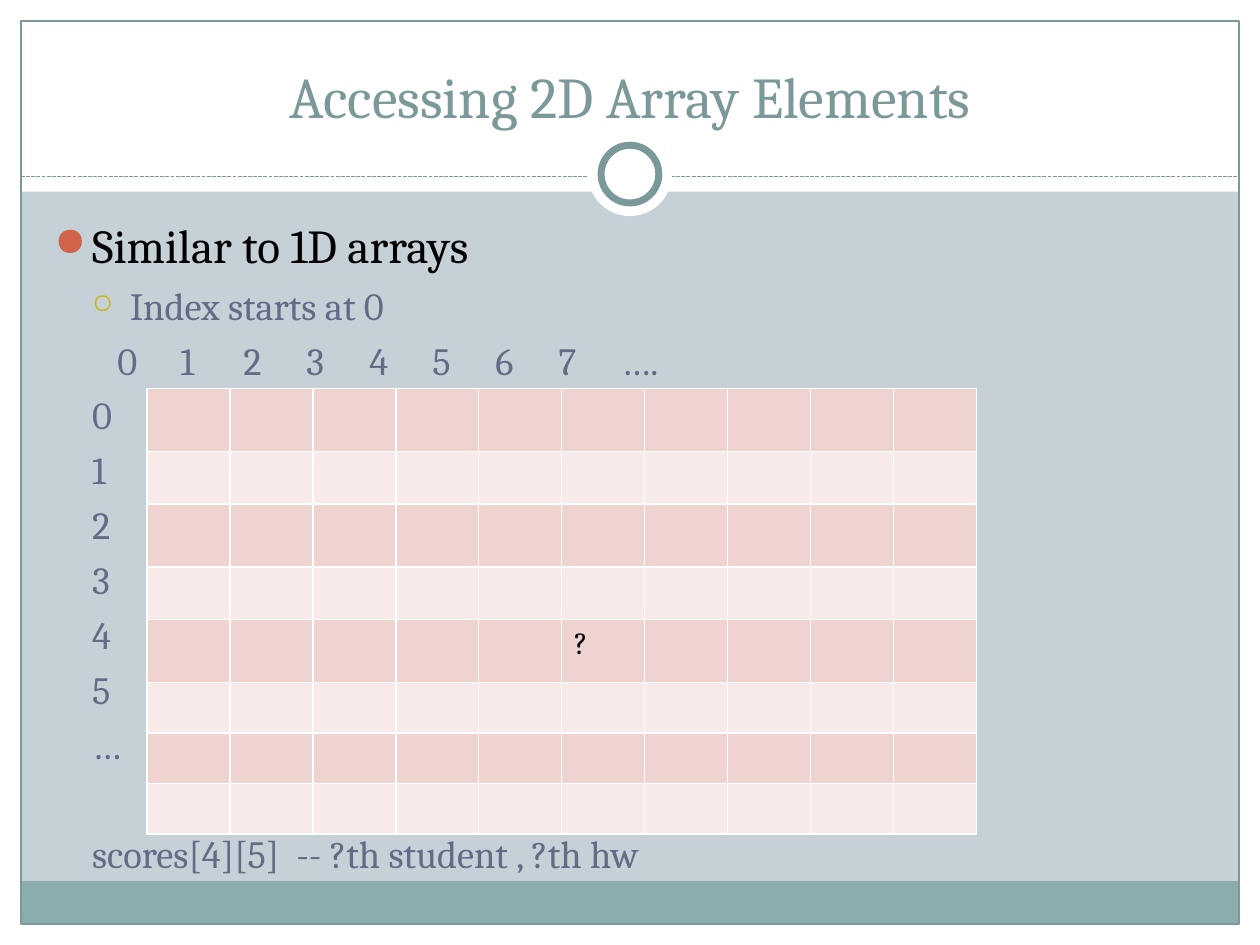
from lxml import etree
from pptx import Presentation
from pptx.dml.color import RGBColor
from pptx.enum.dml import MSO_LINE
from pptx.enum.shapes import MSO_CONNECTOR, MSO_SHAPE
from pptx.enum.text import MSO_ANCHOR, PP_ALIGN
from pptx.oxml import parse_xml
from pptx.oxml.ns import nsdecls, qn
from pptx.util import Pt

WHITE = RGBColor(0xFF, 0xFF, 0xFF)
BLACK = RGBColor(0, 0, 0)
MIST = RGBColor(0xC5, 0xD1, 0xD7)
TEAL = RGBColor(0x7C, 0x99, 0x9A)
BAND = RGBColor(0x8C, 0xAD, 0xAE)
SLATE = RGBColor(0x64, 0x6B, 0x86)
RED = RGBColor(0xD1, 0x63, 0x49)
GOLD = RGBColor(0xCC, 0xB4, 0x00)
ROSE = RGBColor(0xEE, 0xD3, 0xD0)
PALE = RGBColor(0xF7, 0xEA, 0xE9)
FONT = "Cambria"
WIDE, HIGH = 720, 540
STEP = 21.6
STOPS = [70, 109, 157, 196, 240, 284, 329, 368, 413]
ROWS = [36, 30, 36, 30, 36, 28, 28, 28]
COLS = 10


def style(par, size, color):
    par.font.name = FONT
    par.font.size = Pt(size)
    par.font.color.rgb = color


def shape(slide, kind, box, fill=None, line=None, width=0.75):
    item = slide.shapes.add_shape(kind, *map(Pt, box))
    item.shadow.inherit = False
    if fill is None:
        item.fill.background()
    else:
        item.fill.solid()
        item.fill.fore_color.rgb = fill
    if line is None:
        item.line.fill.background()
    else:
        item.line.color.rgb = line
        item.line.width = Pt(width)


def frame(slide, box):
    """Draw the page border, header band, footer band and ring."""
    left, top, width, height = box
    edge, head, foot = 12, 109.5, 24.5
    right, base = left + width, top + height
    inner = width - 2 * edge
    for part in [
        (left, base - edge, width, edge),
        (left, top, width, head),
        (left, top, edge, height),
        (right - edge, top, edge, height),
    ]:
        shape(slide, MSO_SHAPE.RECTANGLE, part, WHITE)
    shape(slide, MSO_SHAPE.RECTANGLE,
          (left + edge, base - edge - foot, inner, foot), BAND)
    shape(slide, MSO_SHAPE.RECTANGLE,
          (left + edge, top + edge, inner, height - 2 * edge), line=TEAL)

    rule = top + 100.8
    line = slide.shapes.add_connector(
        MSO_CONNECTOR.STRAIGHT, Pt(left + edge), Pt(rule), Pt(right - edge), Pt(rule))
    line.line.color.rgb = TEAL
    line.line.width = Pt(0.75)
    line.line.dash_style = MSO_LINE.SQUARE_DOT
    etree.SubElement(line.element.spPr, qn("a:effectLst"))

    mid, hub = left + width / 2, top + 99.5
    for size, color in [(48, None), (33, TEAL)]:
        shape(slide, MSO_SHAPE.OVAL,
              (mid - size / 2, hub - size / 2, size, size), WHITE, color, 4)


def heading(slide, box, text):
    title = slide.shapes.title
    title.left, title.top, title.width, title.height = map(Pt, box)
    title.text_frame.text = text
    title.text_frame.vertical_anchor = MSO_ANCHOR.BOTTOM
    par = title.text_frame.paragraphs[0]
    par.alignment = PP_ALIGN.CENTER
    style(par, 33, TEAL)
    title.element.getparent().append(title.element)


def indent(par, left, hang=0):
    props = par._p.get_or_add_pPr()
    props.set("marL", str(Pt(left)))
    props.set("indent", str(Pt(-hang)))
    return props


def bullet(props, char, color, size):
    for xml in [
        f'<a:buClr {nsdecls("a")}><a:srgbClr val="{color}"/></a:buClr>',
        f'<a:buSzPct {nsdecls("a")} val="{size * 1000}"/>',
        f'<a:buChar {nsdecls("a")} char="{char}"/>',
    ]:
        props.append(parse_xml(xml))


def notes(slide, box):
    """Write the bullets, the index labels and the example."""
    body = slide.shapes.add_textbox(*map(Pt, box)).text_frame
    body.word_wrap = True

    first = body.paragraphs[0]
    first.text = "Similar to 1D arrays"
    bullet(indent(first, STEP, STEP), "●", RED, 85)
    style(first, 27, BLACK)

    def add(text, left=STEP, hang=0, gap=5):
        par = body.add_paragraph()
        par.text = text
        par.level = 1
        par.space_before = Pt(gap)
        return par, indent(par, left, hang)

    start, props = add("Index starts at 0", 2 * STEP, STEP)
    bullet(props, "○", GOLD, 70)
    heads, props = add("".join(f"\t{n}" for n in [*range(8), "…."]), 0)
    tabs = etree.SubElement(props, qn("a:tabLst"))
    for stop in STOPS:
        etree.SubElement(tabs, qn("a:tab"), pos=str(Pt(stop)), algn="ctr")
    for label in [*range(6), "…"]:
        add(str(label))
    add("scores[4][5]  -- ?th student , ?th hw", gap=36)
    for par in body.paragraphs[1:]:
        style(par, 22, SLATE)


def border(cell):
    props = cell._tc.get_or_add_tcPr()
    for spot, side in enumerate("LRTB"):
        props.insert(spot, parse_xml(
            f'<a:ln{side} {nsdecls("a")} w="{Pt(1)}"><a:solidFill>'
            f'<a:srgbClr val="{WHITE}"/></a:solidFill></a:ln{side}>'))


def grid(slide, box):
    table = slide.shapes.add_table(len(ROWS), COLS, *map(Pt, box)).table
    table.first_row = table.horz_banding = False
    for col in table.columns:
        col.width = Pt(box[2] / COLS)
    table.cell(4, 5).text = "?"
    for at, (row, high) in enumerate(zip(table.rows, ROWS)):
        row.height = Pt(high)
        for cell in row.cells:
            cell.fill.solid()
            cell.fill.fore_color.rgb = PALE if at % 2 else ROSE
            border(cell)
            style(cell.text_frame.paragraphs[0], 18, BLACK)


def main():
    deck = Presentation()
    deck.slide_width, deck.slide_height = Pt(WIDE), Pt(HIGH)
    slide = deck.slides.add_slide(deck.slide_layouts[5])
    slide.background.fill.solid()
    slide.background.fill.fore_color.rgb = MIST
    frame(slide, (0, 0, WIDE, HIGH))
    heading(slide, (24, 18, 672, 60), "Accessing 2D Array Elements")
    notes(slide, (24, 120, 672, 407.5))
    grid(slide, (84, 222, 474, sum(ROWS)))
    deck.save("out.pptx")


if __name__ == "__main__":
    main()
